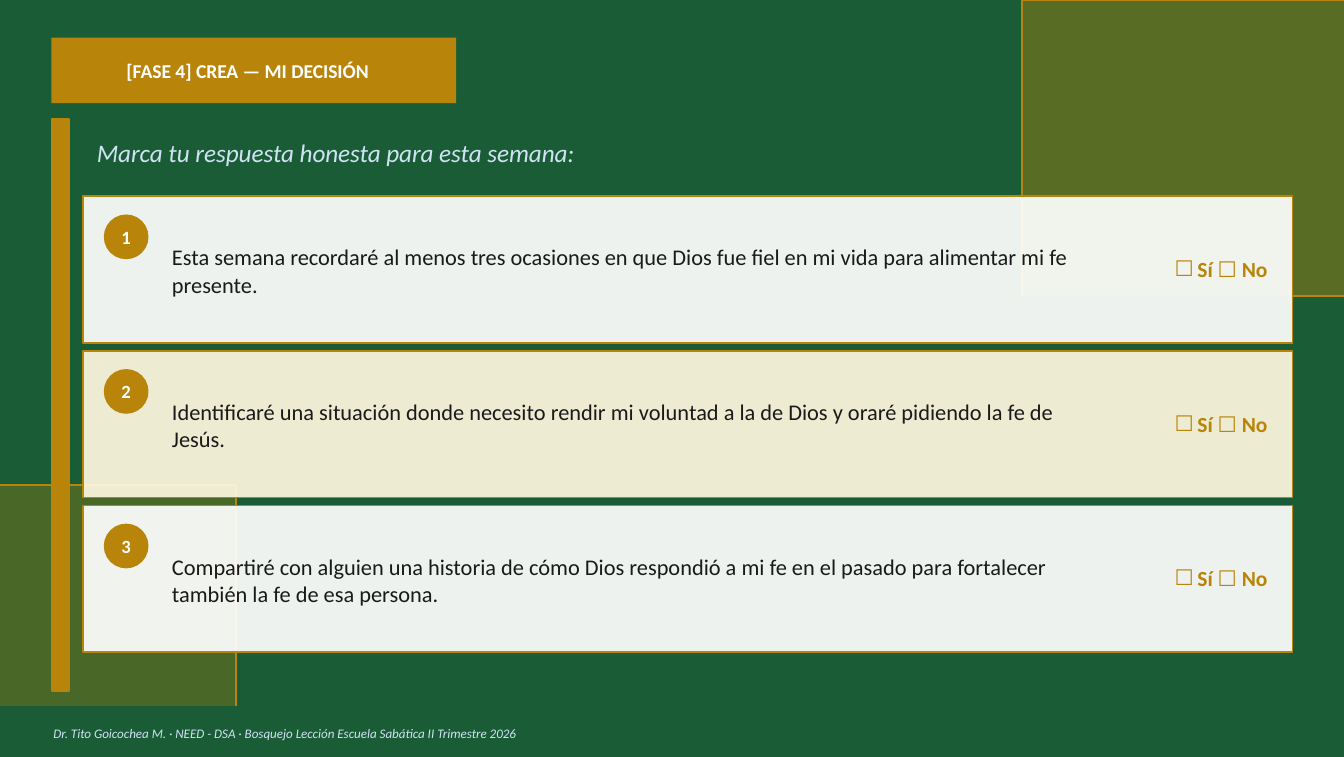
from dataclasses import dataclass

from lxml import etree
from pptx import Presentation
from pptx.dml.color import RGBColor as RGB
from pptx.enum.shapes import MSO_CONNECTOR as Connector, MSO_SHAPE as Shape
from pptx.enum.text import MSO_ANCHOR as Anchor, PP_ALIGN as Align
from pptx.oxml.ns import qn
from pptx.util import Cm, Pt

PHASE = "[FASE 4] CREA — MI DECISIÓN"
PROMPT = "Marca tu respuesta honesta para esta semana:"
COMMITMENTS = [
    "Esta semana recordaré al menos tres ocasiones en que Dios fue fiel en mi vida "
    "para alimentar mi fe presente.",
    "Identificaré una situación donde necesito rendir mi voluntad a la de Dios y "
    "oraré pidiendo la fe de Jesús.",
    "Compartiré con alguien una historia de cómo Dios respondió a mi fe en el pasado "
    "para fortalecer también la fe de esa persona.",
]
BOX, YES, NO = "☐", "Sí ", "No"
CREDIT = ("Dr. Tito Goicochea M. · NEED - DSA · Bosquejo Lección Escuela Sabática "
          "II Trimestre 2026")


@dataclass(frozen=True)
class Theme:
    green: str = "1A5C36"
    gold: str = "B8850A"
    white: str = "FFFFFF"
    cream: str = "FFF8E0"
    ice: str = "D0E3F5"
    ink: str = "1A1A1A"
    font: str = "Calibri"
    box_font: str = "Cabin"
    phase: float = 10.5
    prompt: float = 13.5
    number: float = 10
    commitment: float = 12
    answer: float = 11.5
    credit: float = 7


T = Theme()
WIDTH, HEIGHT = 25.4, 14.3
FOOTER_TOP = 13.36
CARD_LEFT, CARD_TOP, CARD_WIDTH, CARD_HEIGHT, CARD_PITCH = 1.57, 3.71, 22.86, 2.77, 2.92

prs = Presentation()
prs.slide_width, prs.slide_height = Cm(WIDTH), Cm(HEIGHT)
slide = prs.slides.add_slide(prs.slide_layouts[6])
slide.background.fill.solid()
slide.background.fill.fore_color.rgb = RGB.from_string(T.green)


def add_block(left, top, width, height, fill, line=None, opacity=100, kind=Shape.RECTANGLE):
    block = slide.shapes.add_shape(kind, Cm(left), Cm(top), Cm(width), Cm(height))
    block.shadow.inherit = False
    block.fill.solid()
    block.fill.fore_color.rgb = RGB.from_string(fill)
    if opacity < 100:
        color = block.fill._xPr.find(".//" + qn("a:srgbClr"))
        etree.SubElement(color, qn("a:alpha"), val=str(opacity * 1000))
    if line:
        draw_line(block)
        block.line.color.rgb = RGB.from_string(line)
    else:
        block.line.fill.background()
    return block


def draw_line(outlined):
    outlined.line.color.rgb = RGB.from_string(T.gold)
    outlined.line.width = Pt(1)


def add_corner_edge(*points):
    """Draw an open gold outline through points given in centimetres."""
    start, *rest = [(Cm(x), Cm(y)) for x, y in points]
    builder = slide.shapes.build_freeform(*start)
    builder.add_line_segments(rest, close=False)
    edge = builder.convert_to_shape()
    edge.shadow.inherit = False
    edge.fill.background()
    draw_line(edge)


def prepare(frame, wrap=True, left=0):
    frame.word_wrap = wrap
    frame.margin_left = Cm(left)
    frame.margin_top = frame.margin_right = frame.margin_bottom = 0
    return frame.paragraphs[0]


def style(paragraph, size, color, bold=False, italic=False, font=T.font):
    paragraph.font.size = Pt(size)
    paragraph.font.bold, paragraph.font.italic = bold, italic
    paragraph.font.color.rgb = RGB.from_string(color)
    if font:
        paragraph.font.name = font


def add_text(left, top, width, height, text, size, color, **look):
    box = slide.shapes.add_textbox(Cm(left), Cm(top), Cm(width), Cm(height))
    paragraph = prepare(box.text_frame)
    paragraph.text = text
    style(paragraph, size, color, **look)
    return paragraph


def add_answer(left, top):
    """Add the yes/no pair, with the first checkbox as the bullet."""
    box = slide.shapes.add_textbox(Cm(left), Cm(top), Cm(1.95), Cm(0.5))
    paragraph = prepare(box.text_frame, wrap=False)
    props = paragraph._p.get_or_add_pPr()
    props.set("marL", str(Cm(0.48)))
    props.set("indent", str(Cm(-0.43)))
    bullet_color = etree.SubElement(props, qn("a:buClr"))
    etree.SubElement(bullet_color, qn("a:srgbClr"), val=T.gold)
    etree.SubElement(props, qn("a:buFont"), typeface=T.box_font)
    etree.SubElement(props, qn("a:buChar"), char=BOX)
    tabs = etree.SubElement(props, qn("a:tabLst"))
    etree.SubElement(tabs, qn("a:tab"), pos=str(Cm(0.48)), algn="l")
    style(paragraph, T.answer, T.gold, bold=True, font=None)
    for text, font in ((YES, T.font), (BOX + " ", T.box_font), (NO, T.font)):
        run = paragraph.add_run()
        run.text, run.font.name = text, font


def add_card(index, commitment):
    top = CARD_TOP + index * CARD_PITCH
    fill = T.cream if index % 2 else T.white
    add_block(CARD_LEFT, top, CARD_WIDTH, CARD_HEIGHT, fill, T.gold, opacity=92)
    badge = add_block(CARD_LEFT + 0.41, top + 0.36, 0.81, 0.81, T.gold, T.gold, kind=Shape.OVAL)
    badge.text_frame.vertical_anchor = Anchor.MIDDLE
    number = prepare(badge.text_frame, wrap=False)
    number.text, number.alignment = str(index + 1), Align.CENTER
    style(number, T.number, T.white, bold=True)
    body = add_text(CARD_LEFT + 1.68, top + 0.88, 17.65, 1.1, commitment, T.commitment, T.ink)
    body.line_spacing = 1.02
    add_answer(CARD_LEFT + 20.58, top + 1.13)


# Corner decorations
right_x, right_y = 19.32, 5.6
add_block(right_x, 0, WIDTH - right_x, right_y, T.gold, opacity=40)
add_corner_edge((WIDTH, 0), (right_x, 0), (right_x, right_y))
stub = slide.shapes.add_connector(Connector.STRAIGHT, Cm(CARD_LEFT + CARD_WIDTH), Cm(right_y),
                                  Cm(WIDTH), Cm(right_y))
draw_line(stub)
etree.SubElement(stub._element.spPr, qn("a:effectLst"))
left_x, left_y = 4.46, 9.17
add_block(0, left_y, left_x, FOOTER_TOP - left_y, T.gold, opacity=30)
add_corner_edge((left_x, FOOTER_TOP), (left_x, left_y), (0, left_y))

# Heading
add_block(0.98, 2.25, 0.33, 10.8, T.gold, T.gold)
banner = add_block(0.97, 0.71, 7.65, 1.24, T.gold)
banner.text_frame.vertical_anchor = Anchor.MIDDLE
phase = prepare(banner.text_frame, left=1.42)
phase.text, phase.alignment = PHASE, Align.LEFT
style(phase, T.phase, T.white, bold=True)
add_text(1.83, 2.6, 11, 0.6, PROMPT, T.prompt, T.ice, italic=True)

for index, commitment in enumerate(COMMITMENTS):
    add_card(index, commitment)

# Footer
add_block(0, FOOTER_TOP, WIDTH, HEIGHT - FOOTER_TOP, T.green, T.green)
add_text(1.01, 13.71, 11, 0.33, CREDIT, T.credit, T.ice, italic=True)

prs.save("out.pptx")
